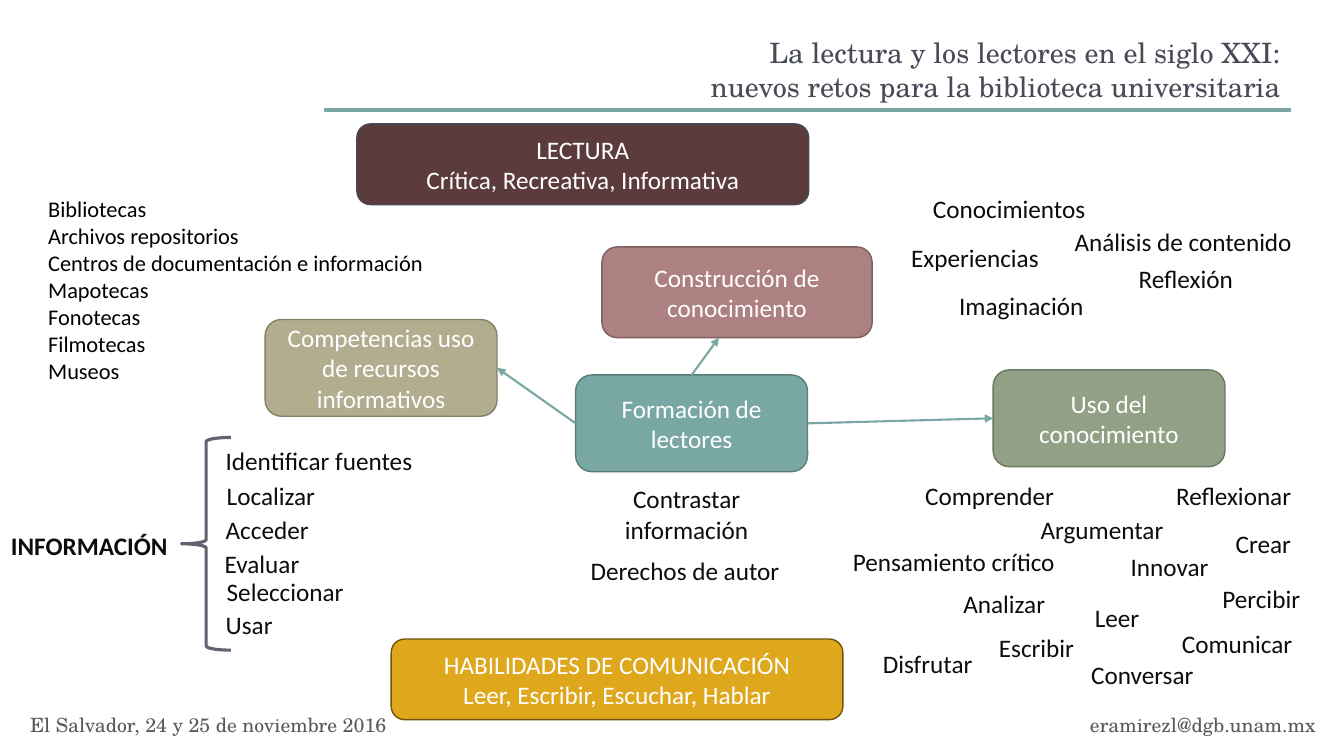
from pptx import Presentation
from pptx.dml.color import RGBColor as RGB
from pptx.enum.shapes import MSO_CONNECTOR as LINE, MSO_SHAPE as SHAPE
from pptx.enum.text import MSO_ANCHOR as ANCHOR, MSO_AUTO_SIZE as FIT, PP_ALIGN as ALIGN
from pptx.oxml.ns import qn
from pptx.util import Inches, Pt
from lxml import etree

TEAL, TEAL_EDGE = RGB(0x79, 0xA8, 0xA4), RGB(0x5A, 0x7C, 0x79)
ROSE, ROSE_EDGE = RGB(0xAD, 0x80, 0x82), RGB(0x80, 0x5F, 0x60)
SAND, SAND_EDGE = RGB(0xB2, 0xAD, 0x8F), RGB(0x84, 0x80, 0x6A)
SAGE, SAGE_EDGE = RGB(0x92, 0xA1, 0x85), RGB(0x6C, 0x77, 0x62)
GOLD, GOLD_EDGE = RGB(0xDF, 0xA7, 0x1C), RGB(0x6F, 0x54, 0x0E)
WINE, WINE_EDGE = RGB(0x5B, 0x3B, 0x3C), RGB(0x47, 0x49, 0x54)
SLATE, BRACE = RGB(0x47, 0x4B, 0x57), RGB(0x60, 0x63, 0x72)
WHITE, BLACK = RGB(0xFF, 0xFF, 0xFF), RGB(0, 0, 0)
INK, GREY = RGB(0x0D, 0x0D, 0x0D), RGB(0x59, 0x59, 0x59)
SANS, SERIF = "Calibri", "TeX Gyre Schola"


def write(frame, text, size=18, color=INK, font=SANS, bold=False, lead=None,
          align=ALIGN.CENTER, anchor=ANCHOR.TOP, wrap=True):
    frame.word_wrap = wrap
    frame.vertical_anchor = anchor
    frame.text = text
    for para in frame.paragraphs:
        para.alignment = align
        para.line_spacing = lead
        for run in para.runs:
            face = run.font
            face.name, face.size, face.bold = font, Pt(size), bold
            face.color.rgb = color


def label(slide, box, text, grow=True, **style):
    frame = slide.shapes.add_textbox(*map(Inches, box)).text_frame
    write(frame, text, **style)
    frame.auto_size = FIT.SHAPE_TO_FIT_TEXT if grow else FIT.NONE


def card(slide, box, text, fill, edge):
    shape = slide.shapes.add_shape(SHAPE.ROUNDED_RECTANGLE, *map(Inches, box))
    shape.shadow.inherit = False
    shape.fill.solid()
    shape.fill.fore_color.rgb = fill
    shape.line.color.rgb = edge
    shape.line.width = Pt(1)
    write(shape.text_frame, text, color=WHITE, anchor=ANCHOR.MIDDLE)


def rule(slide, start, end, width):
    line = slide.shapes.add_connector(LINE.STRAIGHT, *map(Inches, start + end))
    line.line.color.rgb = TEAL
    line.line.width = Pt(width)
    etree.SubElement(line._element.spPr, qn("a:effectLst"))
    return line


def arrow(slide, start, end):
    line = rule(slide, start, end, 1.5)
    etree.SubElement(line.line._get_or_add_ln(), qn("a:tailEnd"), type="triangle")


def header(slide, box):
    x, y, w, h = box
    rule(slide, (x, y + h), (x + w, y + h), 3)
    label(slide, box, "La lectura y los lectores en el siglo XXI:\v"
          "nuevos retos para la biblioteca universitaria", grow=False, lead=0.99,
          size=20, color=SLATE, font=SERIF, align=ALIGN.RIGHT, anchor=ANCHOR.MIDDLE)


def cloud(slide, box, words):
    """Scatter words given as (text, right, down, width) from the box corner."""
    x, y = box
    for text, right, down, width in words:
        label(slide, (x + right, y + down, width, 0.4), text, wrap=False)


def diagram(slide, box):
    x, y = box
    size = (2.3, 0.96)
    card(slide, (x + 3.34, y, 2.68, 0.9), "Construcción de conocimiento", ROSE, ROSE_EDGE)
    card(slide, (x + 3.08, y + 1.27, *size), "Formación de lectores", TEAL, TEAL_EDGE)
    card(slide, (x, y + 0.72, *size),
         "Competencias uso de recursos informativos", SAND, SAND_EDGE)
    card(slide, (x + 7.22, y + 1.22, *size), "Uso del conocimiento", SAGE, SAGE_EDGE)
    # Arrows from the central card
    arrow(slide, (x + 3.08, y + 1.75), (x + 2.3, y + 1.2))
    arrow(slide, (x + 4.23, y + 1.27), (x + 4.5, y + 0.9))
    arrow(slide, (x + 5.38, y + 1.75), (x + 7.22, y + 1.7))
    # Notes under the central card
    label(slide, (x + 3.26, y + 2.3, 1.84, 0.71), "Contrastar información")
    label(slide, (x + 3.13, y + 3.01, 2.07, 0.4), "Derechos de autor")


def info(slide, box):
    x, y, w, h = box
    label(slide, (x - 2.01, y + 0.87, 2.19, 0.4), "INFORMACIÓN", bold=True)
    brace = slide.shapes.add_shape(SHAPE.LEFT_BRACE, *map(Inches, box))
    brace.shadow.inherit = False
    brace.fill.background()
    brace.line.color.rgb = BRACE
    brace.line.width = Pt(2.25)
    steps = [("Identificar fuentes", 0.34, 0.03, 2.17), ("Localizar", 0.35, 0.38, 1.11),
             ("Acceder", 0.34, 0.71, 1.04), ("Evaluar", 0.33, 1.05, 1.08),
             ("Seleccionar", 0.35, 1.33, 1.39), ("Usar", 0.34, 1.66, 0.75)]
    for text, right, down, width in steps:
        label(slide, (x + right, y + down, width, 0.4), text, align=ALIGN.LEFT, wrap=False)


def footer(slide, box):
    x, y, w, h = box
    style = dict(size=14, color=GREY, font=SERIF, wrap=False)
    label(slide, (x, y, 3.84, h), "El Salvador, 24 y 25 de noviembre 2016",
          align=ALIGN.LEFT, **style)
    label(slide, (x + w - 2.46, y, 2.46, h), "eramirezl@dgb.unam.mx",
          align=ALIGN.RIGHT, **style)


SOURCES = ["Bibliotecas", "Archivos repositorios", "Centros de documentación e información",
           "Mapotecas", "Fonotecas", "Filmotecas", "Museos"]
BUILD = [("Conocimientos", 0, 0, 2.5), ("Análisis de contenido", 1.66, 0.33, 2.63),
         ("Reflexión", 2.41, 0.69, 1.18), ("Imaginación", 0.57, 0.96, 1.6),
         ("Experiencias", 0.11, 0.49, 1.6)]
USAGE = [("Reflexionar", 3.18, 0, 1.39), ("Comprender", 0.7, 0, 1.51),
         ("Crear", 3.77, 0.47, 0.8), ("Innovar", 2.74, 0.7, 1),
         ("Analizar", 0.56, 1.07, 2.08), ("Argumentar", 1.84, 0.33, 1.46),
         ("Comunicar", 3.25, 1.46, 1.32), ("Conversar", 2.32, 1.77, 1.3),
         ("Disfrutar", 0.28, 1.66, 1.12), ("Pensamiento crítico", -0.05, 0.65, 2.3),
         ("Percibir", 3.6, 1.02, 1.1), ("Escribir", 1.37, 1.5, 1.1),
         ("Leer", 2.32, 1.21, 0.8)]


def main():
    deck = Presentation()
    deck.slide_width, deck.slide_height = Inches(13.33), Inches(7.5)
    slide = deck.slides.add_slide(deck.slide_layouts[6])

    header(slide, (3.21, 0.31, 9.59, 0.78))
    diagram(slide, (2.63, 2.45))
    # Word groups around the diagram
    cloud(slide, (8.36, 4.72), USAGE)
    cloud(slide, (8.76, 1.87), BUILD)
    label(slide, (0.38, 1.89, 4.5, 1.99), "\n".join(SOURCES),
          size=16, color=BLACK, align=ALIGN.LEFT)
    info(slide, (1.8, 4.34, 0.49, 2.11))
    # Wide cards below and above
    card(slide, (3.88, 6.34, 4.48, 0.8),
         "HABILIDADES DE COMUNICACIÓN\nLeer, Escribir, Escuchar, Hablar", GOLD, GOLD_EDGE)
    card(slide, (3.54, 1.23, 4.48, 0.8),
         "LECTURA\nCrítica, Recreativa, Informativa", WINE, WINE_EDGE)
    footer(slide, (0.2, 7.02, 12.95, 0.34))
    deck.save("out.pptx")


if __name__ == "__main__":
    main()
